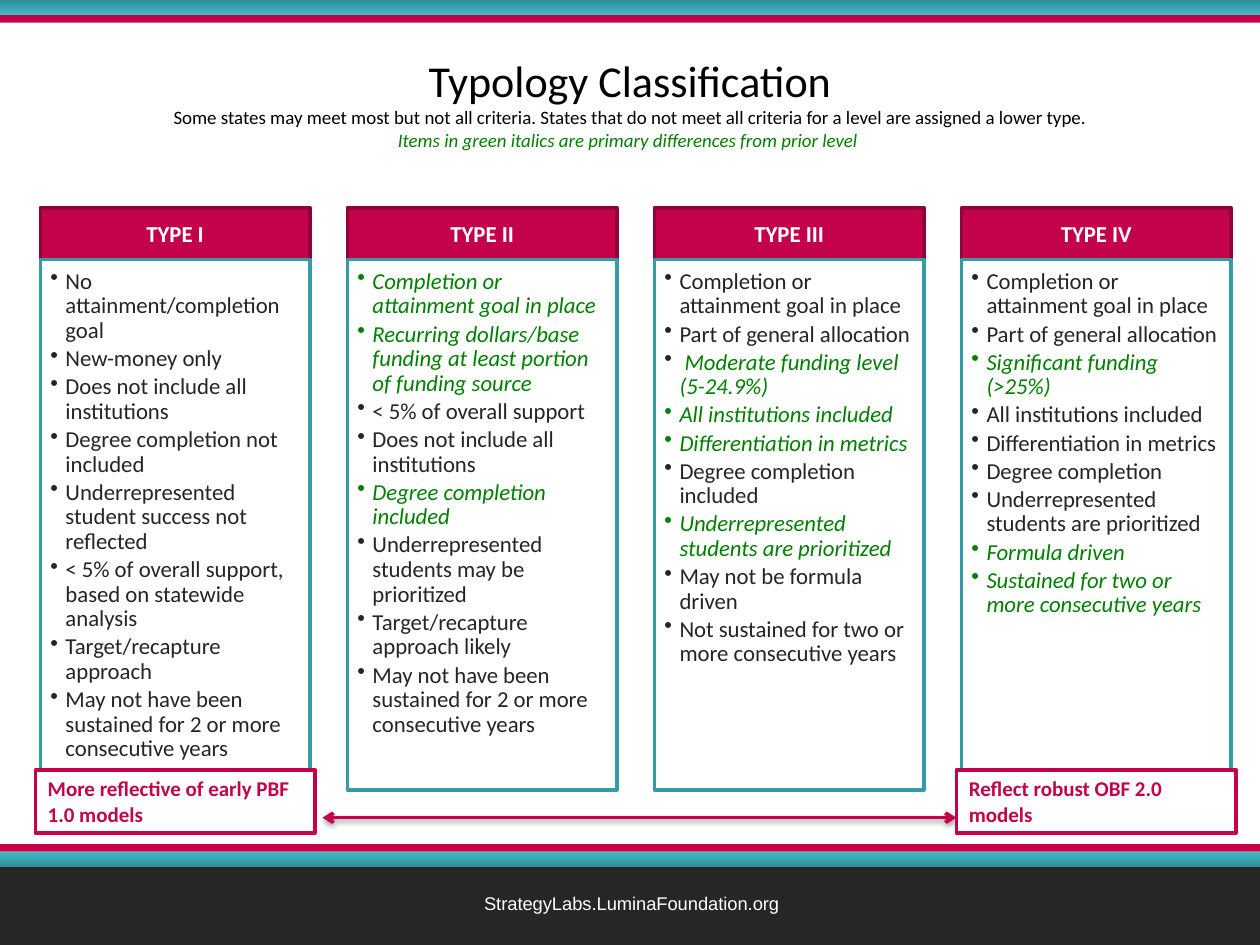
from dataclasses import dataclass

from lxml.etree import SubElement
from pptx import Presentation
from pptx.dml.color import RGBColor
from pptx.enum.shapes import MSO_CONNECTOR, MSO_SHAPE
from pptx.enum.text import MSO_ANCHOR, PP_ALIGN
from pptx.oxml.ns import qn
from pptx.util import Inches, Pt


@dataclass(frozen=True)
class Theme:
    """Colours, fonts and type sizes of the slide."""
    red: str = "C4024C"
    stripe: str = "C4004C"
    wine: str = "910138"
    teal: str = "369BA5"
    deep: str = "2E8F99"
    light: str = "43BAC6"
    dark: str = "262626"
    ink: str = "252525"
    green: str = "008000"
    white: str = "FFFFFF"
    black: str = "000000"
    face: str = "Calibri"
    plain: str = "Arial"
    title: float = 25.2
    note: float = 10.8
    body: float = 13
    label: float = 12
    foot: float = 10.5
    edge: float = 2


@dataclass(frozen=True)
class Box:
    """An area in cells of a grid of 100 columns by 75 rows."""
    x: float
    y: float
    w: float
    h: float

    def inner(self, x, y, w, h):
        """Return an area offset from this one's corner."""
        return Box(self.x + x, self.y + y, w, h)

    def place(self):
        """Return left, top, width and height as lengths."""
        return [Inches(n / 10) for n in (self.x, self.y, self.w, self.h)]


LOOK = Theme()
TYPES = {
    "TYPE I": [
        "No attainment/completion goal",
        "New-money only",
        "Does not include all institutions",
        "Degree completion not included",
        "Underrepresented student success not reflected",
        "< 5% of overall support, based on statewide analysis",
        "Target/recapture approach",
        "May not have been sustained for 2 or more consecutive years",
    ],
    "TYPE II": [
        "*Completion or attainment goal in place",
        "*Recurring dollars/base funding at least portion of funding source",
        "< 5% of overall support",
        "Does not include all institutions",
        "*Degree completion included",
        "Underrepresented students may be prioritized",
        "Target/recapture approach likely",
        "May not have been sustained for 2 or more consecutive years",
    ],
    "TYPE III": [
        "Completion or attainment goal in place",
        "Part of general allocation",
        " *Moderate funding level (5-24.9%)",
        "*All institutions included",
        "*Differentiation in metrics",
        "Degree completion included",
        "*Underrepresented students are prioritized",
        "May not be formula driven",
        "Not sustained for two or more consecutive years",
    ],
    "TYPE IV": [
        "Completion or attainment goal in place",
        "Part of general allocation",
        "*Significant funding (>25%)",
        "All institutions included",
        "Differentiation in metrics",
        "Degree completion",
        "Underrepresented students are prioritized",
        "*Formula driven",
        "*Sustained for two or more consecutive years",
    ],
}


def tint(text):
    """Turn a hex string into a colour."""
    return RGBColor.from_string(text)


def block(slide, box, fill, edge=None):
    """Draw a rectangle, with an outline if an edge colour is given."""
    shape = slide.shapes.add_shape(MSO_SHAPE.RECTANGLE, *box.place())
    shape.shadow.inherit = False
    shape.fill.solid()
    shape.fill.fore_color.rgb = tint(fill)
    if edge:
        shape.line.color.rgb = tint(edge)
        shape.line.width = Pt(LOOK.edge)
    else:
        shape.line.fill.background()
    return shape


def frame(shape, anchor, pads=(0.1, 0.05, 0.1, 0.05)):
    """Set wrapping, anchor and insets, and return the text frame."""
    text = shape.text_frame
    text.word_wrap = True
    text.vertical_anchor = anchor
    (text.margin_left, text.margin_top,
     text.margin_right, text.margin_bottom) = map(Inches, pads)
    return text


def line(text, first, align=PP_ALIGN.CENTER):
    """Return the first paragraph, or a new one."""
    para = text.paragraphs[0] if first else text.add_paragraph()
    para.alignment = align
    return para


def write(para, words, size, color, face=LOOK.face, bold=False, slant=False):
    """Add one run to a paragraph."""
    run = para.add_run()
    run.text = words
    font = run.font
    font.size, font.name = Pt(size), face
    font.bold, font.italic = bold, slant
    font.color.rgb = tint(color)


def band(slide, box, turn=0):
    """Draw a teal gradient stripe."""
    shape = block(slide, box, LOOK.deep)
    shape.fill.gradient()
    shape.fill.gradient_angle = 90
    for stop, color in zip(shape.fill.gradient_stops, (LOOK.deep, LOOK.light)):
        stop.color.rgb = tint(color)
    shape.rotation = turn


def header(slide, box):
    """Draw the stripes along the top."""
    band(slide, box.inner(0, 0, box.w, 1.2), 180)
    block(slide, box.inner(0, 1.2, box.w, 0.6), LOOK.stripe)


def footer(slide, box):
    """Draw the stripes and the address along the bottom."""
    block(slide, box.inner(0, 1.8, box.w, 6.2), LOOK.dark)
    band(slide, box.inner(0, 0.6, box.w, 1.2))
    block(slide, box.inner(0, 0, box.w, 0.6), LOOK.stripe)
    area = box.inner(30.1, 3.3, 40.1, 2.9)
    text = frame(slide.shapes.add_textbox(*area.place()), MSO_ANCHOR.TOP)
    write(line(text, True), "StrategyLabs.LuminaFoundation.org",
          LOOK.foot, LOOK.white, LOOK.plain)


def heading(slide, box):
    """Write the title and its two notes."""
    text = frame(slide.shapes.add_textbox(*box.place()), MSO_ANCHOR.MIDDLE)
    write(line(text, True), "Typology Classification", LOOK.title, LOOK.black)
    write(line(text, False), "Some states may meet most but not all criteria. "
          "States that do not meet all criteria for a level are assigned "
          "a lower type.", LOOK.note, LOOK.black)
    write(line(text, False), "Items in green italics are primary differences "
          "from prior level ", LOOK.note, LOOK.green, slant=True)


def bullet(para):
    """Give a paragraph a hanging bullet and its spacing."""
    props = para._p.get_or_add_pPr()
    props.set("marL", str(Inches(0.12)))
    props.set("indent", str(-Inches(0.12)))
    SubElement(props, qn("a:buChar")).set("char", "•")
    para.line_spacing = 0.9
    para.space_after = Pt(2)


def card(slide, box, name, items):
    """Draw one type; words after an asterisk are green italics."""
    head = block(slide, box.inner(0, 0, box.w, 4.1), LOOK.red, LOOK.wine)
    text = frame(head, MSO_ANCHOR.MIDDLE, (0.1, 0.06, 0.1, 0.06))
    write(line(text, True), name, LOOK.body, LOOK.white, bold=True)
    body = block(slide, box.inner(0, 4.1, box.w, box.h - 4.1),
                 LOOK.white, LOOK.teal)
    text = frame(body, MSO_ANCHOR.TOP, (0.08, 0.08, 0.1, 0.11))
    for row, item in enumerate(items):
        para = line(text, row == 0, PP_ALIGN.LEFT)
        bullet(para)
        plain, *fresh = item.split("*")
        if plain:
            write(para, plain, LOOK.body, LOOK.ink)
        for words in fresh:
            write(para, words, LOOK.body, LOOK.green, slant=True)


def cards(slide, box):
    """Set the four types in equal columns."""
    wide = 21.4
    step = (box.w - wide) / (len(TYPES) - 1)
    for col, (name, items) in enumerate(TYPES.items()):
        card(slide, box.inner(col * step, 0, wide, box.h), name, items)


def arrow(slide, box):
    """Draw a shadowed arrow with two heads across a box."""
    x, y, w, _ = box.place()
    link = slide.shapes.add_connector(MSO_CONNECTOR.STRAIGHT, x, y, x + w, y)
    link.line.color.rgb = tint(LOOK.red)
    link.line.width = Pt(LOOK.edge)
    stroke = link.line._get_or_add_ln()
    for end in ("a:headEnd", "a:tailEnd"):
        SubElement(stroke, qn(end)).set("type", "arrow")
    glow = SubElement(link._element.spPr, qn("a:effectLst"))
    shade = SubElement(glow, qn("a:outerShdw"), blurRad=str(Pt(3.1)),
                       dist=str(Pt(1.6)), dir="5400000", rotWithShape="0")
    color = SubElement(shade, qn("a:srgbClr"), val=LOOK.black)
    SubElement(color, qn("a:alpha"), val="38000")


def scale(slide, box):
    """Draw the arrow and the labels at its two ends."""
    wide = 22.2
    arrow(slide, box.inner(wide + 0.6, 3.8, box.w - 2 * wide - 0.6, 0))
    ends = ("More reflective of early PBF 1.0 models",
            "Reflect robust OBF 2.0 models")
    for left, words in zip((0, box.w - wide), ends):
        label = block(slide, box.inner(left, 0, wide, box.h),
                      LOOK.white, LOOK.red)
        text = frame(label, MSO_ANCHOR.TOP)
        write(line(text, True, PP_ALIGN.LEFT), words,
              LOOK.label, LOOK.red, bold=True)


def main():
    """Build the slide and save it."""
    deck = Presentation()
    deck.slide_width, deck.slide_height = Inches(10), Inches(7.5)
    slide = deck.slides.add_slide(deck.slide_layouts[6])
    footer(slide, Box(0, 67, 100, 8))
    header(slide, Box(0, 0, 100, 1.8))
    heading(slide, Box(5, 3.4, 90, 9.4))
    cards(slide, Box(3.2, 16.5, 94.5, 46.2))
    scale(slide, Box(2.8, 61.1, 95.3, 5))
    deck.save("out.pptx")


if __name__ == "__main__":
    main()
